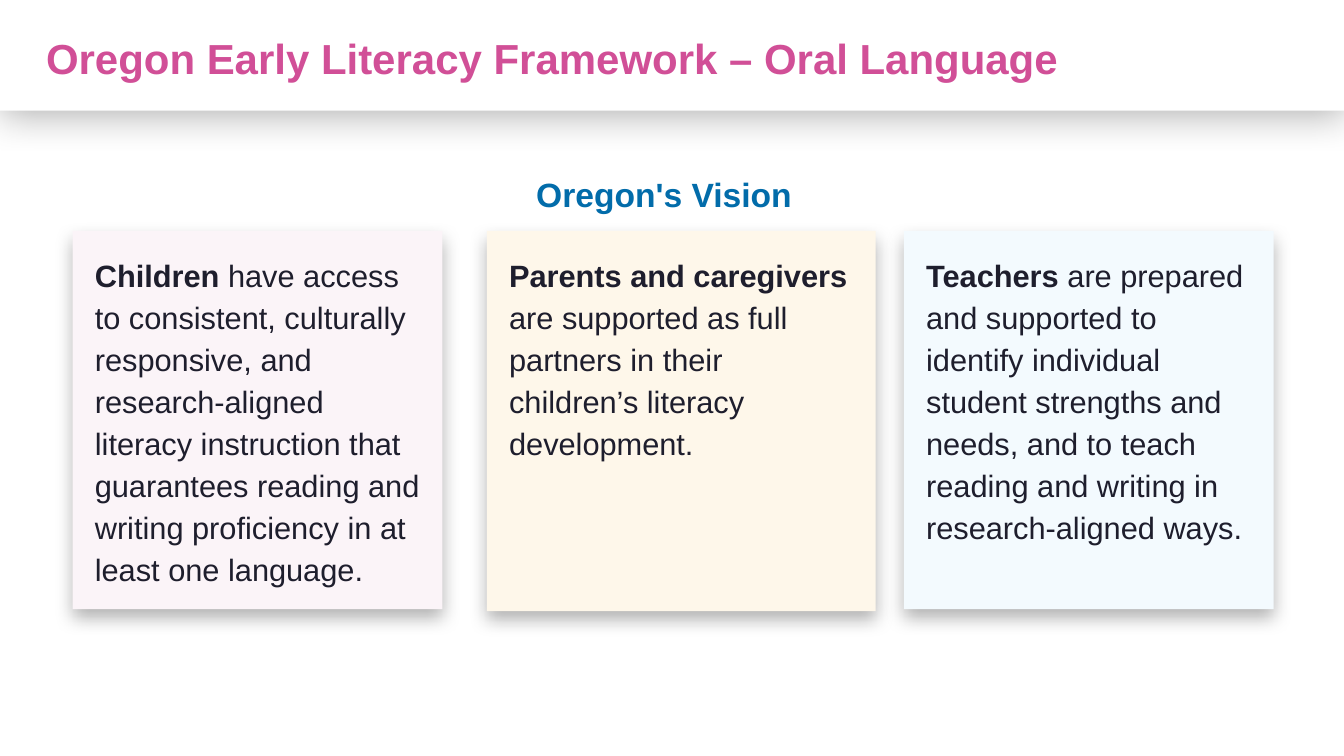
from lxml.etree import SubElement
from pptx import Presentation
from pptx.dml.color import RGBColor
from pptx.enum.shapes import MSO_SHAPE
from pptx.enum.text import MSO_ANCHOR, MSO_AUTO_SIZE, PP_ALIGN
from pptx.oxml.ns import qn
from pptx.util import Cm, Pt

WHITE = RGBColor(0xFF, 0xFF, 0xFF)
PINK = RGBColor(0xD1, 0x4F, 0x97)
BLUE = RGBColor(0x02, 0x6C, 0xAA)
INK = RGBColor(0x1E, 0x1E, 0x2D)
ROSE = RGBColor(0xFB, 0xF4, 0xF8)
CREAM = RGBColor(0xFE, 0xF7, 0xEA)
SKY = RGBColor(0xF3, 0xFA, 0xFE)

WIDTH = Cm(33.87)
INSET = Cm(0.51)

CARDS = [
    (2, Cm(1.83), Cm(9.32), Cm(9.53), ROSE, "Children",
     " have access to consistent, culturally responsive, and "
     "research-aligned literacy instruction that guarantees reading and "
     "writing proficiency in at least one language."),
    (3, Cm(12.27), Cm(9.8), Cm(9.58), CREAM, "Parents and caregivers ",
     "are supported as full partners in their children’s literacy "
     "development."),
    (4, Cm(22.78), Cm(9.32), Cm(9.53), SKY, "Teachers",
     " are prepared and supported to identify individual student strengths "
     "and needs, and to teach reading and writing in research-aligned ways."),
]


def place(shape, left, top, width, height):
    shape.left, shape.top = left, top
    shape.width, shape.height = width, height


def shade(shape, blur, drop):
    effects = SubElement(shape._element.spPr, qn("a:effectLst"))
    shadow = SubElement(effects, qn("a:outerShdw"), blurRad=str(Pt(blur)),
                        dist=str(Pt(drop)), dir="5400000", algn="t",
                        rotWithShape="0")
    color = SubElement(shadow, qn("a:srgbClr"), val="000000")
    SubElement(color, qn("a:alpha"), val="30000")


def write(shape, text, lead="", size=22, color=INK, bold=False,
          align=PP_ALIGN.LEFT, anchor=MSO_ANCHOR.TOP, space=1.14,
          inset=INSET, indent=0):
    frame = shape.text_frame
    frame.word_wrap = True
    frame.auto_size = MSO_AUTO_SIZE.NONE
    frame.vertical_anchor = anchor
    frame.margin_left = frame.margin_right = inset
    frame.margin_top = frame.margin_bottom = inset
    para = frame.paragraphs[0]
    props = para._p.get_or_add_pPr()
    props.set("marL", str(indent))
    props.set("indent", "0")
    SubElement(props, qn("a:buNone"))
    para.alignment = align
    para.line_spacing = space
    para.space_before = Pt(0)
    for part, heavy in ((lead, True), (text, bold)):
        if part:
            run = para.add_run()
            run.text = part
            run.font.name = "Arial"
            run.font.size = Pt(size)
            run.font.bold = heavy
            run.font.color.rgb = color


def add_banner(slide):
    banner = slide.shapes.add_shape(MSO_SHAPE.RECTANGLE, 0, 0, WIDTH, Cm(2.79))
    banner.fill.solid()
    banner.fill.fore_color.rgb = WHITE
    banner.line.fill.background()
    shade(banner, 28, 3)
    slide.shapes._spTree.insert(2, banner._element)


def fill_card(shape, left, width, height, tint, lead, text):
    place(shape, left, Cm(5.82), width, height)
    shape.fill.solid()
    shape.fill.fore_color.rgb = tint
    shade(shape, 13, 6)
    write(shape, text, lead=lead, indent=Cm(0.05))


def main():
    deck = Presentation()
    deck.slide_width, deck.slide_height = WIDTH, Cm(19.05)
    layout = deck.slide_layouts.get_by_name("Comparison")
    slide = deck.slides.add_slide(layout)
    holders = {item.placeholder_format.idx: item for item in slide.placeholders}

    add_banner(slide)
    title = slide.shapes.title
    place(title, Cm(0.91), Cm(0.69), Cm(32.18), Cm(1.55))
    write(title, "Oregon Early Literacy Framework – Oral Language", size=30,
          color=PINK, bold=True, anchor=MSO_ANCHOR.MIDDLE, space=1.0,
          inset=Cm(0.25))

    vision = holders[1]
    place(vision, Cm(0.91), Cm(3.73), Cm(31.65), Cm(2.11))
    write(vision, "Oregon's Vision", size=24, color=BLUE, bold=True,
          align=PP_ALIGN.CENTER)

    for index, *card in CARDS:
        fill_card(holders[index], *card)
    deck.save("out.pptx")


if __name__ == "__main__":
    main()
